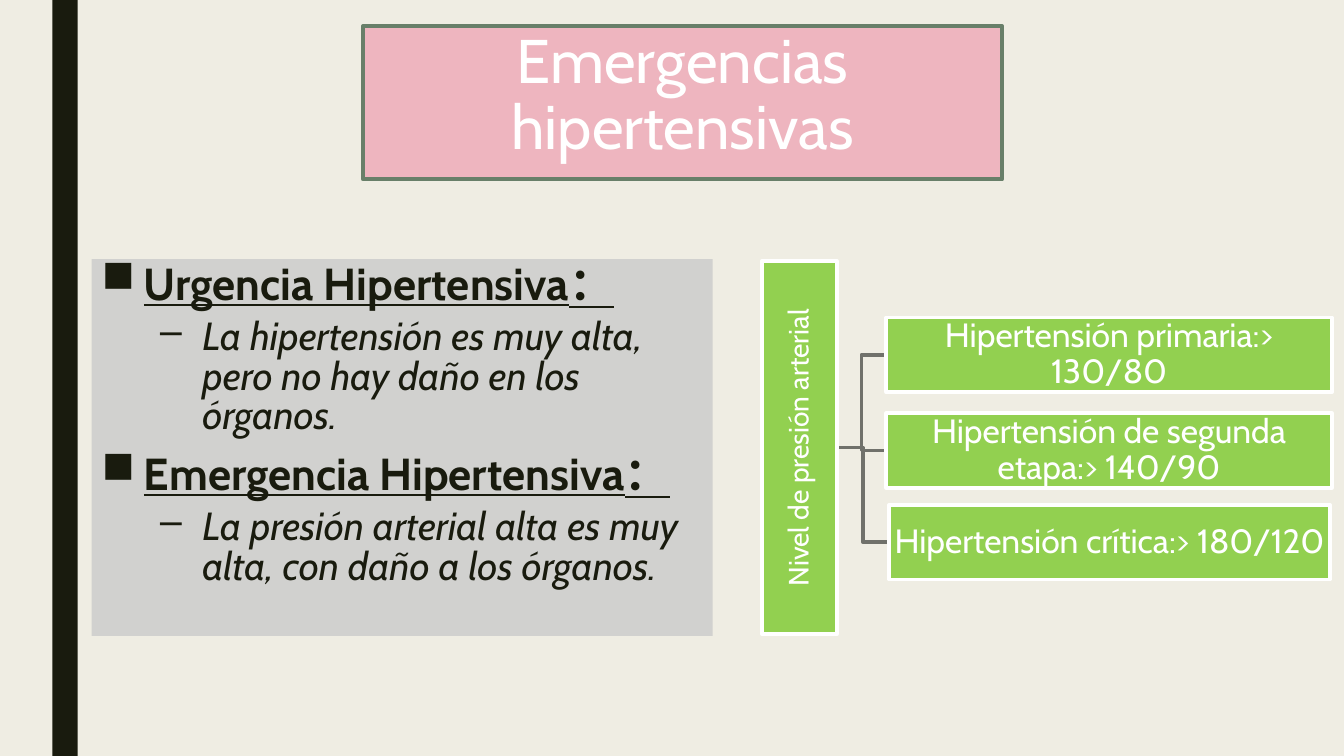
"""Build a slide on hypertensive emergencies with pressure levels."""
import pptx
import pptx.util
import pptx.dml.color
import pptx.enum.shapes
import pptx.enum.text
import pptx.oxml
import pptx.oxml.ns

Inches, Pt = pptx.util.Inches, pptx.util.Pt
RGBColor = pptx.dml.color.RGBColor
RECT = pptx.enum.shapes.MSO_SHAPE.RECTANGLE
ALIGN = pptx.enum.text.PP_ALIGN
ANCHOR = pptx.enum.text.MSO_ANCHOR

CREAM = RGBColor(0xEF, 0xED, 0xE3)
DARK = RGBColor(0x19, 0x1B, 0x0E)
PINK = RGBColor(0xEE, 0xB5, 0xBF)
SAGE = RGBColor(0x68, 0x7F, 0x69)
GREEN = RGBColor(0x92, 0xD0, 0x50)
WHITE = RGBColor(0xFF, 0xFF, 0xFF)
GRAY = RGBColor(0x70, 0x71, 0x6B)
SILVER = RGBColor(0xD1, 0xD1, 0xCF)


def write(para, text, size, color=WHITE, align=ALIGN.CENTER, space=0.9, **style):
    para.alignment = align
    para.line_spacing = space
    run = para.add_run()
    run.text = text
    run.font.name = "Cabin"
    run.font.size = Pt(size)
    run.font.color.rgb = color
    for key, value in style.items():
        setattr(run.font, key, value)


def add_box(left, top, width, height, fill, line=None, inset=0.02):
    box = slide.shapes.add_shape(
        RECT, Inches(left), Inches(top), Inches(width), Inches(height))
    box.shadow.inherit = False
    box.fill.solid()
    box.fill.fore_color.rgb = fill
    if line is None:
        box.line.fill.background()
    else:
        box.line.color.rgb = line
        box.line.width = Pt(2.75)
    frame = box.text_frame
    frame.word_wrap = True
    frame.vertical_anchor = ANCHOR.MIDDLE
    frame.margin_left = frame.margin_right = Inches(inset)
    frame.margin_top = frame.margin_bottom = Inches(inset)
    return box


deck = pptx.Presentation()
deck.slide_width, deck.slide_height = Inches(13.33), Inches(7.5)
slide = deck.slides.add_slide(deck.slide_layouts[5])
slide.background.fill.solid()
slide.background.fill.fore_color.rgb = CREAM
add_box(0.52, 0, 0.25, 7.5, DARK)

title = slide.shapes.title
title.left, title.top = Inches(3.6), Inches(0.26)
title.width, title.height = Inches(6.34), Inches(1.52)
title.fill.solid()
title.fill.fore_color.rgb = PINK
title.line.color.rgb = SAGE
title.line.width = Pt(2.75)
title.text_frame.word_wrap = True
title.text_frame.auto_size = pptx.enum.text.MSO_AUTO_SIZE.NONE
title.text_frame.vertical_anchor = ANCHOR.TOP
write(title.text_frame.paragraphs[0], "Emergencias hipertensivas", 44, space=0.89)

levels = [
    ("Hipertensión primaria:> 130/80", 8.79, 3.15, 4.42),
    ("Hipertensión de segunda etapa:> 140/90", 8.79, 4.1, 4.42),
    ("Hipertensión crítica:> 180/120", 8.82, 5.01, 4.37),
]
start, axis, tall = 8.3, 4.44, 0.74
for text, left, top, width in reversed(levels):
    bend, mid = (start + left) / 2, top + tall / 2
    path = slide.shapes.build_freeform(Inches(start), Inches(axis), scale=1.0)
    path.add_line_segments(
        [(Inches(x), Inches(y)) for x, y in ((bend, axis), (bend, mid), (left, mid))],
        close=False)
    link = path.convert_to_shape()
    link.shadow.inherit = False
    link.fill.background()
    link.line.color.rgb = GRAY
    link.line.width = Pt(2.75)

root = add_box(6.08, 4.07, 3.7, tall, GREEN, WHITE, 0.01)
root.rotation = 270
write(root.text_frame.paragraphs[0], "Nivel de presión arterial", 20)
for text, left, top, width in levels:
    box = add_box(left, top, width, tall, GREEN, WHITE)
    write(box.text_frame.paragraphs[0], text, 24)

panel = add_box(0.91, 2.57, 6.16, 3.74, SILVER)
frame = panel.text_frame
frame.vertical_anchor = ANCHOR.TOP
frame.margin_left = frame.margin_right = Inches(0.1)
frame.margin_top = frame.margin_bottom = Inches(0.05)
topics = [
    ("Urgencia Hipertensiva：", 0),
    ("La hipertensión es muy alta, pero no hay daño en los órganos.", 1),
    ("Emergencia Hipertensiva：", 0),
    ("La presión arterial alta es muy alta, con daño a los órganos.", 1),
]
looks = [
    (32, 10, 0.42, "■", {"bold": True, "underline": True}),
    (28, 5, 1, "–", {"italic": True}),
]
for index, (text, level) in enumerate(topics):
    size, before, indent, mark, style = looks[level]
    para = frame.add_paragraph() if index else frame.paragraphs[0]
    para.level = level
    write(para, text, size, DARK, ALIGN.LEFT, 0.84, **style)
    para.space_before, para.space_after = Pt(before), Pt(2)
    props = para._p.get_or_add_pPr()
    props.set("marL", str(Inches(indent)))
    props.set("indent", str(Inches(-0.42)))
    bullet = pptx.oxml.parse_xml(
        f'<a:buChar {pptx.oxml.ns.nsdecls("a")} char="{mark}"/>')
    props.append(bullet)

deck.save("out.pptx")
